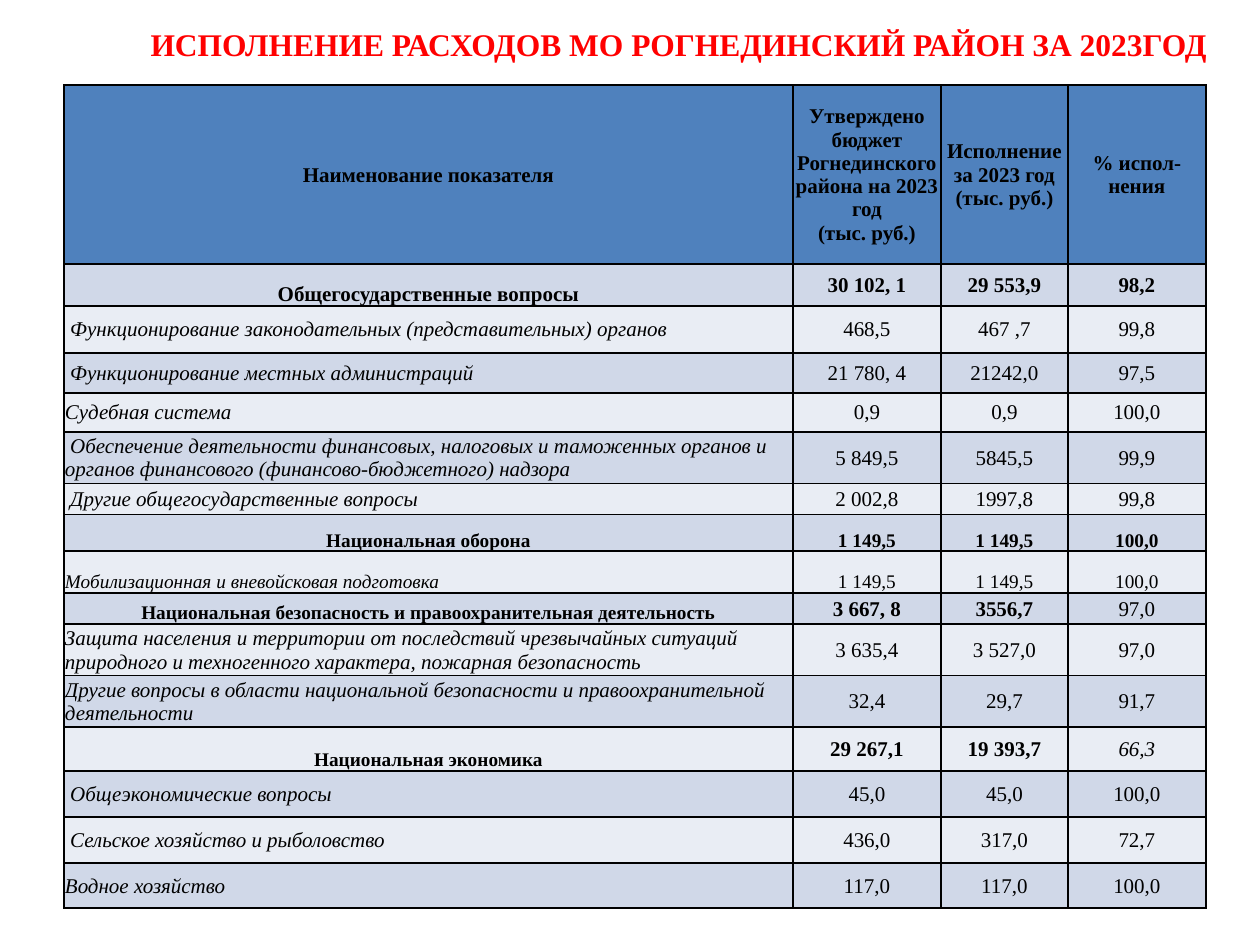
"""Build the slide with the 2023 district budget spending table."""
from lxml.etree import SubElement
from pptx import Presentation
from pptx.dml.color import RGBColor
from pptx.enum.text import MSO_ANCHOR as ANCHOR, PP_ALIGN as ALIGN
from pptx.oxml.ns import qn
from pptx.util import Pt

PX = 914400 // 126
FONT = "Times New Roman"
COLORS = {"title": "FF0000", "text": "000000", "border": "000000",
          "head": "4F81BD", "odd": "D0D8E8", "even": "E9EDF4"}
STYLES = {
    "title": (18, True, False, ALIGN.CENTER, ANCHOR.MIDDLE),
    "B": (12, True, False, ALIGN.CENTER, ANCHOR.MIDDLE),
    "G": (12, True, False, ALIGN.CENTER, ANCHOR.BOTTOM),
    "S": (11, True, False, ALIGN.CENTER, ANCHOR.BOTTOM),
    "I": (12, False, True, ALIGN.LEFT, ANCHOR.MIDDLE),
    "N": (11, False, True, ALIGN.LEFT, ANCHOR.BOTTOM),
    "v": (12, False, False, ALIGN.CENTER, ANCHOR.MIDDLE),
    "n": (11, False, False, ALIGN.CENTER, ANCHOR.BOTTOM),
    "e": (12, False, True, ALIGN.CENTER, ANCHOR.MIDDLE),
}
COL_WIDTHS = [729, 148, 127, 138]
ROWS = [
    (179, "BBBB", "Наименование показателя",
     "Утверждено бюджет Рогнединского района на 2023 год\v(тыс. руб.)",
     "Исполнение за 2023 год (тыс. руб.)", "% испол-нения"),
    (42, "GBBB", "Общегосударственные вопросы", "30 102, 1", "29 553,9", "98,2"),
    (47, "Ivvv", " Функционирование законодательных (представительных) органов",
     "468,5", "467 ,7", "99,8"),
    (40, "Ivvv", " Функционирование местных администраций", "21 780, 4", "21242,0", "97,5"),
    (39, "Ivvv", "Судебная система", "0,9", "0,9", "100,0"),
    (50, "Ivvv", " Обеспечение деятельности финансовых, налоговых и таможенных органов "
     "и органов финансового (финансово-бюджетного) надзора", "5 849,5", "5845,5", "99,9"),
    (31, "Ivvv", " Другие общегосударственные вопросы", "2 002,8", "1997,8", "99,8"),
    (37, "SSSS", "Национальная оборона", "1 149,5", "1 149,5", "100,0"),
    (42, "Nnnn", "Мобилизационная и вневойсковая подготовка", "1 149,5", "1 149,5", "100,0"),
    (31, "SBBv", "Национальная безопасность и правоохранительная деятельность",
     "3 667, 8", "3556,7", "97,0"),
    (50, "Ivvv", "Защита населения и территории от последствий чрезвычайных ситуаций "
     "природного и техногенного характера, пожарная безопасность",
     "3 635,4", "3 527,0", "97,0"),
    (48, "Ivvv", "Другие вопросы в области национальной безопасности "
     "и правоохранительной деятельности", "32,4", "29,7", "91,7"),
    (44, "SBBe", "Национальная экономика", "29 267,1", "19 393,7", "66,3"),
    (46, "Ivvv", " Общеэкономические вопросы", "45,0", "45,0", "100,0"),
    (46, "Ivvv", " Сельское хозяйство и рыболовство", "436,0", "317,0", "72,7"),
    (45, "Ivvv", "Водное хозяйство", "117,0", "117,0", "100,0"),
]


class Deck:
    def __init__(self, width, height):
        self.prs = Presentation()
        self.prs.slide_width, self.prs.slide_height = width * PX, height * PX
        self.s = self.prs.slides.add_slide(self.prs.slide_layouts[6])

    def fill_text(self, holder, tf, text, style, color):
        size, bold, italic, align, holder.vertical_anchor = STYLES[style]
        p = tf.paragraphs[0]
        p.text, p.alignment = text, align
        f = p.font
        f.name, f.size, f.bold, f.italic = FONT, Pt(size), bold, italic
        f.color.rgb = RGBColor.from_string(COLORS[color])

    def text(self, x, y, w, h, text, style, color):
        tf = self.s.shapes.add_textbox(x * PX, y * PX, w * PX, h * PX).text_frame
        tf.word_wrap = True
        self.fill_text(tf, tf, text, style, color)

    def borders(self, cell):
        tcPr = cell._tc.get_or_add_tcPr()
        for i, side in enumerate(("lnL", "lnR", "lnT", "lnB")):
            ln = tcPr.makeelement(qn(f"a:{side}"), {"w": str(Pt(1))})
            fill = SubElement(ln, qn("a:solidFill"))
            SubElement(fill, qn("a:srgbClr"), val=COLORS["border"])
            tcPr.insert(i, ln)

    def cell(self, cell, text, style, fill):
        cell.margin_left = cell.margin_right = cell.margin_top = PX
        cell.margin_bottom = 0
        self.fill_text(cell, cell.text_frame, text, style, "text")
        cell.fill.solid()
        cell.fill.fore_color.rgb = RGBColor.from_string(COLORS[fill])
        self.borders(cell)

    def table(self, x, y, widths, rows):
        height = sum(row[0] for row in rows)
        table = self.s.shapes.add_table(len(rows), len(widths), x * PX, y * PX,
                                        sum(widths) * PX, height * PX).table
        for col, width in zip(table.columns, widths):
            col.width = width * PX
        for r, (row_height, styles, *texts) in enumerate(rows):
            table.rows[r].height = row_height * PX
            fill = "head" if r == 0 else "odd" if r % 2 else "even"
            for c, (text, style) in enumerate(zip(texts, styles)):
                self.cell(table.cell(r, c), text, style, fill)


def main():
    deck = Deck(1260, 945)
    deck.text(123, 14, 1112, 59, "ИСПОЛНЕНИЕ РАСХОДОВ МО РОГНЕДИНСКИЙ РАЙОН ЗА 2023ГОД",
              "title", "title")
    deck.table(64, 85, COL_WIDTHS, ROWS)
    deck.prs.save("out.pptx")


if __name__ == "__main__":
    main()
